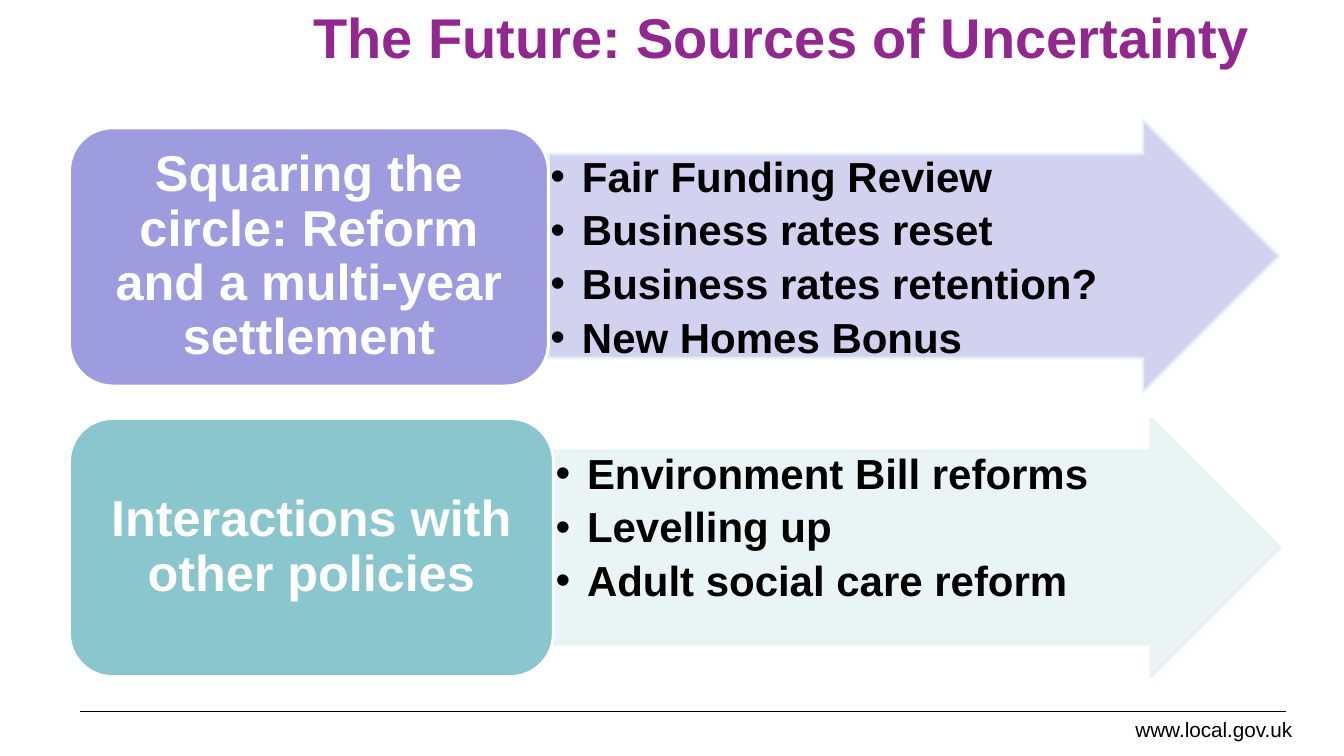
from lxml import etree
from pptx import Presentation
from pptx import util as u
from pptx.dml.color import RGBColor
from pptx.enum import shapes, text
from pptx.oxml import ns

BLACK = RGBColor(0x00, 0x00, 0x00)
WHITE = RGBColor(0xFF, 0xFF, 0xFF)
PURPLE = RGBColor(0x91, 0x27, 0x8F)
LILAC = RGBColor(0x9C, 0x9C, 0xDF)
PALE_LILAC = RGBColor(0xCE, 0xCE, 0xEF)
TEAL = RGBColor(0x8A, 0xC6, 0xCD)
PALE_TEAL = RGBColor(0xE7, 0xF3, 0xF4)


def add_block(s, kind, box, fill, line, alpha, margins):
    sp = s.shapes.add_shape(kind, *[u.Pt(v) for v in box])
    sp.shadow.inherit = False
    sp.fill.solid()
    sp.fill.fore_color.rgb = fill
    sp.line.color.rgb = line
    sp.line.width = u.Pt(2)
    for clr in sp.element.spPr.iter(ns.qn("a:srgbClr")):
        etree.SubElement(clr, ns.qn("a:alpha")).set("val", str(alpha * 1000))
    tf = sp.text_frame
    tf.word_wrap = True
    tf.margin_left = tf.margin_right = u.Pt(margins[0])
    tf.margin_top = tf.margin_bottom = u.Pt(margins[1])
    return sp


def add_text(p, words, size, color, bold, align):
    p.alignment = align
    r = p.add_run()
    r.text = words
    r.font.name = "Arial"
    r.font.size = u.Pt(size)
    r.font.bold = bold
    r.font.color.rgb = color


prs = Presentation()
prs.slide_width, prs.slide_height = u.Pt(960), u.Pt(540)
s = prs.slides.add_slide(prs.slide_layouts[6])

rule = s.shapes.add_connector(shapes.MSO_CONNECTOR.STRAIGHT, u.Pt(57), u.Pt(508.3), u.Pt(918.7), u.Pt(508.3))
rule.line.color.rgb = BLACK
rule.line.width = u.Pt(0.75)
etree.SubElement(rule.element.spPr, ns.qn("a:effectLst"))

labels = [
    ((802, 508.3, 128.2, 25.2), "www.local.gov.uk", 14.8, BLACK, False, text.PP_ALIGN.RIGHT, False),
    ((156, 0, 804, 52), "The Future: Sources of Uncertainty", 40, PURPLE, True, text.PP_ALIGN.CENTER, True),
]
for box, words, size, color, bold, align, wrap in labels:
    tf = s.shapes.add_textbox(*[u.Pt(v) for v in box]).text_frame
    tf.word_wrap = wrap
    tf.vertical_anchor = text.MSO_ANCHOR.MIDDLE if wrap else text.MSO_ANCHOR.TOP
    add_text(tf.paragraphs[0], words, size, color, bold, align)

rows = [
    ((391.7, 85.7, 522, 194.4), PALE_LILAC, (49.7, 91.4, 342, 184.3), LILAC,
     "Squaring the circle: Reform and a multi-year settlement",
     ["Fair Funding Review", "Business rates reset", "Business rates retention?", "New Homes Bonus"]),
    ((395.3, 299, 519.1, 184.3), PALE_TEAL, (49.7, 299, 345.6, 184.3), TEAL,
     "Interactions with other policies",
     ["Environment Bill reforms", "Levelling up", "Adult social care reform"]),
]
for arrow_box, arrow_fill, topic_box, topic_fill, topic, points in rows:
    sp = add_block(s, shapes.MSO_SHAPE.RIGHT_ARROW, arrow_box, arrow_fill, PALE_TEAL, 90, (1.5, 1.5))
    sp.adjustments[0], sp.adjustments[1] = 0.75, 0.5
    tf = sp.text_frame
    tf.vertical_anchor = text.MSO_ANCHOR.TOP
    for i, point in enumerate(points):
        p = tf.paragraphs[0] if i == 0 else tf.add_paragraph()
        p.line_spacing = 0.9
        p.space_after = u.Pt(5.9)
        pPr = p._p.get_or_add_pPr()
        pPr.set("marL", str(u.Pt(22.5)))
        pPr.set("indent", str(u.Pt(-22.5)))
        etree.SubElement(pPr, ns.qn("a:buFont")).set("typeface", "Arial")
        etree.SubElement(pPr, ns.qn("a:buChar")).set("char", "•")
        add_text(p, point, 30, BLACK, True, text.PP_ALIGN.LEFT)

    sp = add_block(s, shapes.MSO_SHAPE.ROUNDED_RECTANGLE, topic_box, topic_fill, WHITE, 100, (10.8, 5.4))
    tf = sp.text_frame
    tf.vertical_anchor = text.MSO_ANCHOR.MIDDLE
    p = tf.paragraphs[0]
    p.line_spacing = 0.9
    add_text(p, topic, 36, WHITE, True, text.PP_ALIGN.CENTER)

prs.save("out.pptx")
